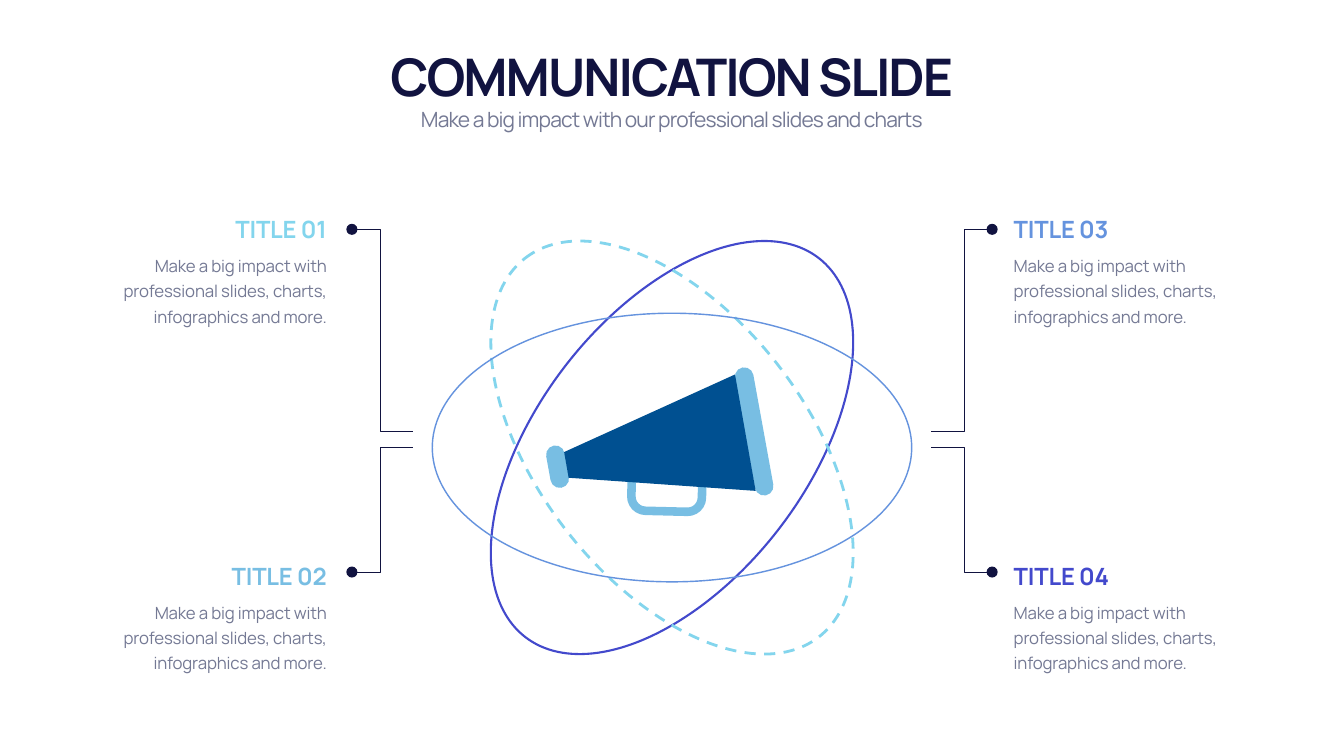
from pptx import Presentation
from pptx.dml.color import RGBColor
from pptx.enum.dml import MSO_LINE
from pptx.enum.shapes import MSO_SHAPE
from pptx.enum.text import MSO_ANCHOR, MSO_AUTO_SIZE, PP_ALIGN
from pptx.util import Inches, Pt

OVAL, ROUNDED = MSO_SHAPE.OVAL, MSO_SHAPE.ROUNDED_RECTANGLE
DASH = MSO_LINE.DASH
TOP, BOTTOM = MSO_ANCHOR.TOP, MSO_ANCHOR.BOTTOM
LEFT, CENTER, RIGHT = PP_ALIGN.LEFT, PP_ALIGN.CENTER, PP_ALIGN.RIGHT
GROW = MSO_AUTO_SIZE.SHAPE_TO_FIT_TEXT

NAVY = RGBColor(0x11, 0x13, 0x40)
GRAY = RGBColor(0x74, 0x79, 0x94)
AQUA = RGBColor(0x83, 0xD5, 0xED)
SKY = RGBColor(0x78, 0xBE, 0xE3)
BLUE = RGBColor(0x65, 0x93, 0xDE)
INDIGO = RGBColor(0x43, 0x49, 0xCC)
DEEP = RGBColor(0x00, 0x50, 0x91)

FONT = "Manrope"
WIDTH, HEIGHT = 26.66, 15
BODY = "Make a big impact with professional slides, charts, infographics and more."


def style(s, fill=None, line=None, weight=1):
    """Set the fill and outline of a shape, leaving out what is not given."""
    s.shadow.inherit = False
    if fill is None:
        s.fill.background()
    else:
        s.fill.solid()
        s.fill.fore_color.rgb = fill
    if line is None:
        s.line.fill.background()
    else:
        s.line.color.rgb = line
        s.line.width = Pt(weight)


def add_centred(shapes, kind, cx, cy, w, h, rotation=0, **look):
    """Add a preset shape around its centre point."""
    s = shapes.add_shape(kind, Inches(cx - w / 2), Inches(cy - h / 2), Inches(w), Inches(h))
    s.rotation = rotation
    style(s, **look)
    return s


def add_path(shapes, points, close, **look):
    """Add a straight-edged outline through the points."""
    start, *rest = [(Inches(x), Inches(y)) for x, y in points]
    builder = shapes.build_freeform(*start)
    builder.add_line_segments(rest, close=close)
    style(builder.convert_to_shape(), **look)


def add_text(shapes, box, text, size, color, align, spacing, bold=False, anchor=TOP, leading=None):
    """Add a text box with one paragraph."""
    tf = shapes.add_textbox(*map(Inches, box)).text_frame
    tf.word_wrap = True
    tf.auto_size = GROW
    tf.vertical_anchor = anchor
    p = tf.paragraphs[0]
    p.alignment = align
    if leading:
        p.line_spacing = Pt(leading)
    r = p.add_run()
    r.text = text
    r.font.name = FONT
    r.font.size = Pt(size)
    r.font.bold = bold
    r.font.color.rgb = color
    r.font._element.set("spc", str(round(spacing * 100)))


def add_orbits(shapes):
    """Add three equal ellipses turned around a shared centre."""
    for angle, color, weight, dash in [
        (-52.24, INDIGO, 3, None),
        (52.24, AQUA, 4, DASH),
        (0, BLUE, 2, None),
    ]:
        s = add_centred(shapes, OVAL, 13.33, 8.88, 9.51, 5.33, angle, line=color, weight=weight)
        if dash:
            s.line.dash_style = dash


def add_bracket(shapes, mirrored, dot_y, end_y):
    """Add a stepped line from a dot towards the orbits."""
    def flip(x):
        return WIDTH - x if mirrored else x

    points = [(7.03, dot_y), (7.54, dot_y), (7.54, end_y), (8.19, end_y)]
    add_path(shapes, [(flip(x), y) for x, y in points], False, line=NAVY)
    add_centred(shapes, OVAL, flip(6.98), dot_y, 0.22, 0.22, fill=NAVY)


def add_megaphone(shapes):
    """Add the megaphone: rims and handle behind the horn."""
    parts = shapes.add_group_shape().shapes
    for cx, cy, length in [(11.06, 9.26, 0.85), (14.96, 8.56, 2.58)]:
        rim = add_centred(parts, ROUNDED, cx, cy, 0.37, length, -10.3, fill=SKY)
        rim.adjustments[0] = 0.5
    handle = add_centred(parts, ROUNDED, 13.23, 9.62, 1.4, 1.05, 1.4, line=SKY, weight=12.25)
    handle.adjustments[0] = 0.27
    horn = [(14.58, 7.43), (11.19, 8.97), (11.28, 9.48), (14.99, 9.74)]
    add_path(parts, horn, True, fill=DEEP)


def add_topic(shapes, x, y, title, color, align):
    """Add a coloured title with its description below."""
    add_text(shapes, (x, y, 4.82, 0.67), title, 34, color, align, -0.3, bold=True, anchor=BOTTOM)
    add_text(shapes, (x, y + 0.72, 4.82, 1.59), BODY, 24, GRAY, align, -0.2, leading=36)


def main():
    """Build and save the slide."""
    prs = Presentation()
    prs.slide_width, prs.slide_height = Inches(WIDTH), Inches(HEIGHT)
    shapes = prs.slides.add_slide(prs.slide_layouts[6]).shapes

    add_orbits(shapes)
    for mirrored in (False, True):
        add_bracket(shapes, mirrored, 4.55, 8.56)
        add_bracket(shapes, mirrored, 11.35, 8.88)
    add_megaphone(shapes)

    add_text(shapes, (1.66, 0.82, 23.33, 1.35), "COMMUNICATION SLIDE",
             74, NAVY, CENTER, -2.9, bold=True, anchor=BOTTOM)
    add_text(shapes, (1.66, 2.07, 23.33, 0.61),
             "Make a big impact with our professional slides and charts", 30, GRAY, CENTER, -1.2)

    upper, lower = 4.21, 11.09
    left, right = 1.76, 20.01
    add_topic(shapes, left, upper, "TITLE 01", AQUA, RIGHT)
    add_topic(shapes, right, upper, "TITLE 03", BLUE, LEFT)
    add_topic(shapes, left, lower, "TITLE 02", SKY, RIGHT)
    add_topic(shapes, right, lower, "TITLE 04", INDIGO, LEFT)
    prs.save("out.pptx")


if __name__ == "__main__":
    main()
